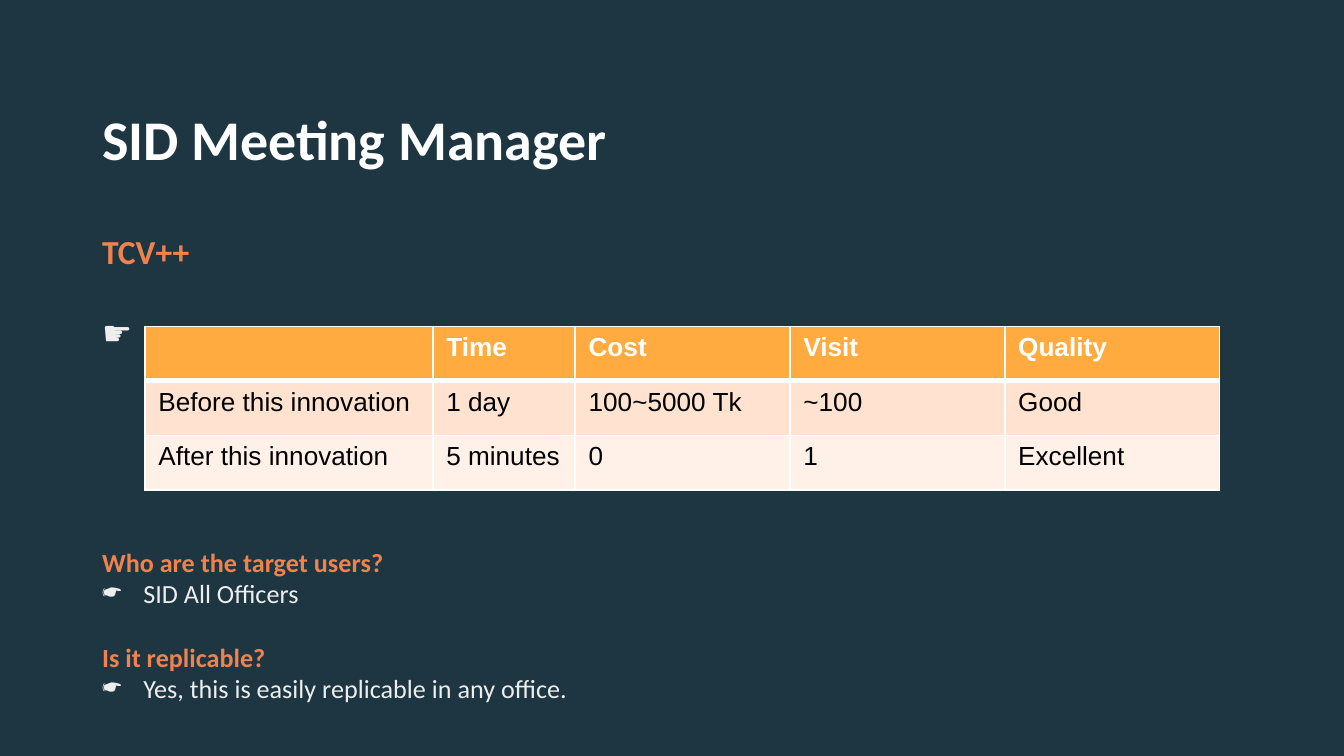
from dataclasses import dataclass
from lxml.etree import SubElement
from pptx import Presentation
from pptx.dml.color import RGBColor as Rgb
from pptx.oxml.ns import qn
from pptx.util import Cm, Pt


@dataclass(frozen=True)
class Theme:
    back: str = "1D3641"
    white: str = "FFFFFF"
    text: str = "EEEEEE"
    accent: str = "F0824F"
    black: str = "000000"
    header: str = "FFAB40"
    bands: tuple = ("FFE2CF", "FFF1E8")
    sans: str = "Calibri"
    grid: str = "Arial"
    title: int = 30
    lead: int = 18
    body: int = 14


THEME = Theme()
HAND = "☛"
ROWS = [
    ["", "Time", "Cost", "Visit", "Quality"],
    ["Before this innovation", "1 day", "100~5000 Tk", "~100", "Good"],
    ["After this innovation", "5 minutes", "0", "1", "Excellent"],
]
WIDTHS = [5.44, 2.69, 4.06, 4.06, 4.06]
# text, size, bold, space before in points, bulleted
LINES = [
    ("TCV++", THEME.lead, True, 0, False),
    (HAND, THEME.lead, False, 22, False),
    ("Who are the target users?", THEME.body, True, 104, False),
    ("SID All Officers", THEME.body, False, 0, True),
    ("Is it replicable?", THEME.body, True, 17, False),
    ("Yes, this is easily replicable in any office.", THEME.body, False, 0, True),
]


def style(para, name, size, color, bold):
    for run in para.runs:
        font = run.font
        font.name, font.size, font.bold = name, Pt(size), bold
        font.color.rgb = Rgb.from_string(color)


def frame(slide, box):
    """Add a wrapping text box with even insets and return its text frame."""
    text = slide.shapes.add_textbox(*map(Cm, box)).text_frame
    text.word_wrap = True
    text.margin_left = text.margin_right = Cm(0.25)
    text.margin_top = text.margin_bottom = Cm(0.25)
    return text


def add_title(slide, box):
    para = frame(slide, box).paragraphs[0]
    para.text = "SID Meeting Manager"
    style(para, THEME.sans, THEME.title, THEME.white, True)


def add_bullet(para):
    props = para._p.get_or_add_pPr()
    props.set("marL", str(Cm(0.78)))
    props.set("indent", str(-Cm(0.78)))
    SubElement(props, qn("a:buChar")).set("char", HAND)


def add_body(slide, box):
    text = frame(slide, box)
    for i, (line, size, bold, gap, bullet) in enumerate(LINES):
        para = text.add_paragraph() if i else text.paragraphs[0]
        para.text = line
        if gap:
            para.space_before = Pt(gap)
        if bullet:
            add_bullet(para)
        style(para, THEME.sans, size, THEME.accent if bold else THEME.text, bold)


def add_edges(cell, top, bottom):
    """Draw white cell borders; top and bottom are widths in points."""
    props = cell._tc.get_or_add_tcPr()
    for side, width in (("L", 1), ("R", 1), ("T", top), ("B", bottom)):
        line = SubElement(props, qn(f"a:ln{side}"), w=str(Pt(width)))
        fill = SubElement(line, qn("a:solidFill"))
        SubElement(fill, qn("a:srgbClr"), val=THEME.white)


def add_grid(slide, box):
    table = slide.shapes.add_table(len(ROWS), len(WIDTHS), *map(Cm, box)).table
    for col, width in zip(table.columns, WIDTHS):
        col.width = Cm(width)
    for r, row in enumerate(ROWS):
        table.rows[r].height = Cm(box[3] / len(ROWS))
        head = r == 0
        for c, value in enumerate(row):
            cell = table.cell(r, c)
            add_edges(cell, 3 if r == 1 else 1, 3 if head else 1)
            cell.fill.solid()
            shade = THEME.header if head else THEME.bands[r - 1]
            cell.fill.fore_color.rgb = Rgb.from_string(shade)
            cell.text_frame.text = value
            color = THEME.white if head else THEME.black
            style(cell.text_frame.paragraphs[0], THEME.grid, THEME.body, color, head)


def main():
    deck = Presentation()
    deck.slide_width, deck.slide_height = Cm(25.4), Cm(14.29)
    slide = deck.slides.add_slide(deck.slide_layouts[6])
    slide.background.fill.solid()
    slide.background.fill.fore_color.rgb = Rgb.from_string(THEME.back)
    add_body(slide, (1.68, 4.11, 22.38, 9.58))
    add_title(slide, (1.68, 1.73, 16.64, 2.46))
    add_grid(slide, (2.74, 6.17, sum(WIDTHS), 3.09))
    deck.save("out.pptx")


if __name__ == "__main__":
    main()
